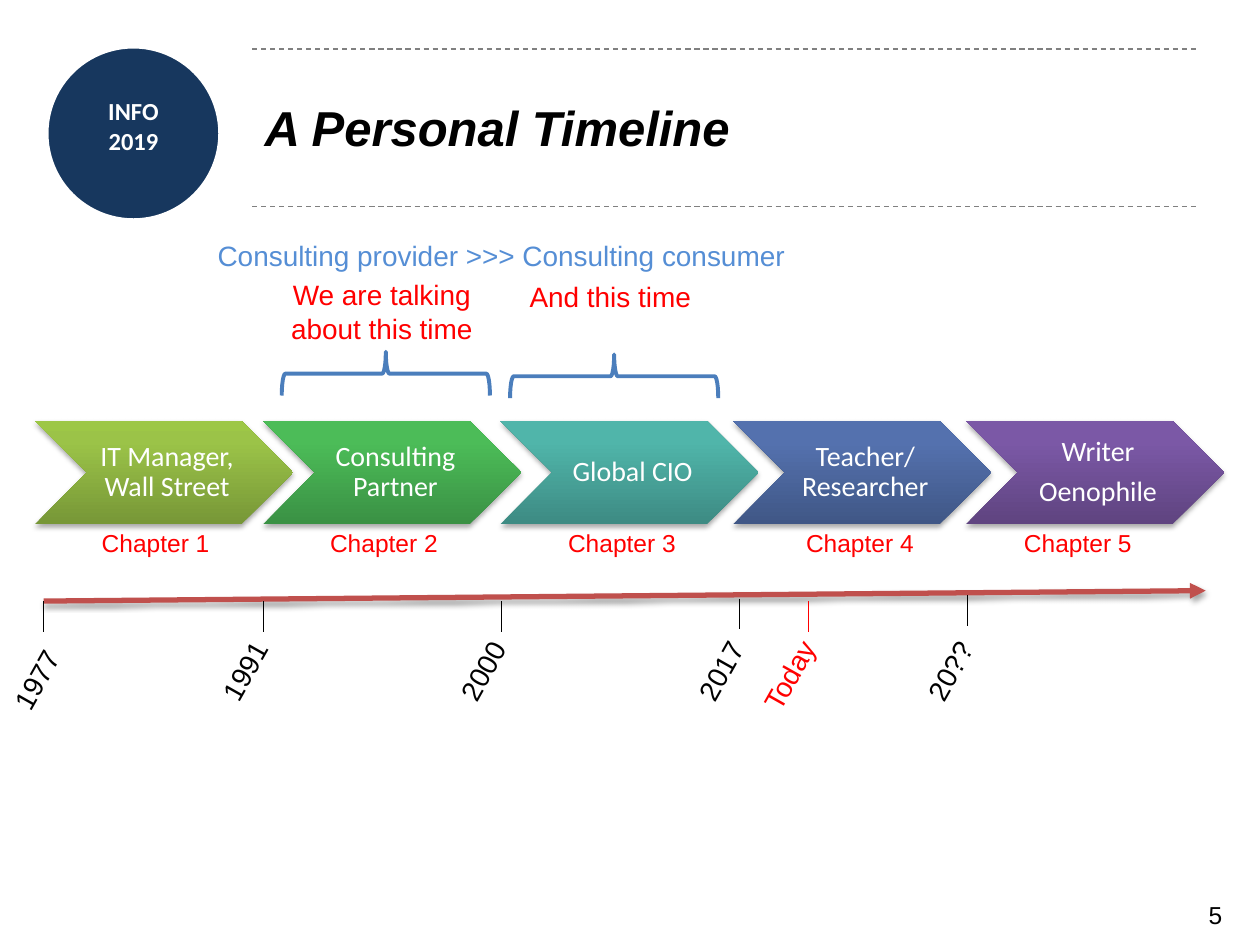
import copy
import pptx
import pptx.util
import pptx.dml.color
import pptx.enum.dml
import pptx.enum.shapes
import pptx.enum.text
import pptx.oxml
import pptx.oxml.ns

Pt = pptx.util.Pt
SHAPE = pptx.enum.shapes.MSO_SHAPE
ALIGN = pptx.enum.text.PP_ALIGN
MIDDLE = pptx.enum.text.MSO_ANCHOR.MIDDLE
RED, BLACK, WHITE = "FF0000", "000000", "FFFFFF"

# Content: text, chevron left, chapter left, gradient colours from the bottom up
CAREER = [
    (["IT Manager, Wall Street"], 20, 51, ("779737", "9BC348", "9DC746")),
    (["Consulting Partner"], 150.5, 181.5, ("3A9144", "4CBC58", "4ABF57")),
    (["Global CIO"], 286, 317.5, ("3D8B83", "50B5AA", "4EB8AC")),
    (["Teacher/ Researcher"], 419, 453.5, ("405786", "5471AE", "5271B0")),
    (["Writer", "Oenophile"], 552, 578, ("5F4480", "7B58A6", "7C57A8")),
]
# Label, tick x, tick top, label left, label top, label width, colour, tick weight
DATES = [
    ("1977", 25, 343.5, -6, 372, 57, BLACK, 0.75),
    ("1991", 150.5, 343.5, 113, 367, 57, BLACK, 0.75),
    ("2000", 286.5, 343.5, 249, 367, 57, BLACK, 0.75),
    ("2017", 422.5, 342, 385, 367, 57, BLACK, 0.75),
    ("20??", 553, 340, 516, 367, 57, BLACK, 0.75),
    ("Today", 462, 343.5, 421, 370, 62.5, RED, 1),
]
# Text, box, brace left, brace top
SPANS = [
    ("We are talking about this time", (156, 155, 124.5, 46), 208, 154),
    ("And this time", (286.5, 156, 124.5, 27), 338.5, 155.5),
]
TITLE = "A Personal Timeline"
BADGE = ["INFO", "2019"]
ROLES = "Consulting provider >>> Consulting consumer"
PAGE = "5"

SHADOW = ('<a:outerShdw %s blurRad="39370" dist="22860" dir="5400000" rotWithShape="0">'
          '<a:srgbClr val="000000"><a:alpha val="35000"/></a:srgbClr></a:outerShdw>'
          % pptx.oxml.ns.nsdecls("a"))


def color(text):
    return pptx.dml.color.RGBColor.from_string(text)


def apply(target, values):
    for name, value in values.items():
        setattr(target, name, value)


def write(shape, lines, size, hue, font="Arial", align=ALIGN.LEFT,
          inset=None, frame=None, para=None, style=None):
    box = shape.text_frame
    apply(box, {"word_wrap": True, **(frame or {})})
    if inset:
        sides = ("margin_left", "margin_top", "margin_right", "margin_bottom")
        apply(box, {side: Pt(gap) for side, gap in zip(sides, inset)})
    for i, line in enumerate(lines):
        p = box.add_paragraph() if i else box.paragraphs[0]
        apply(p, {"alignment": align, **(para or {})})
        run = p.add_run()
        run.text = line
        apply(run.font, {"name": font, "size": Pt(size), **(style or {})})
        run.font.color.rgb = color(hue)


def label(place, lines, size, hue, **more):
    box = slide.shapes.add_textbox(*map(Pt, place))
    write(box, lines, size, hue, **more)
    return box


def shape(kind, place):
    item = slide.shapes.add_shape(kind, *map(Pt, place))
    item.shadow.inherit = False
    return item


def line(x1, y1, x2, y2, hue, width, dash=None):
    item = slide.shapes.add_connector(
        pptx.enum.shapes.MSO_CONNECTOR.STRAIGHT, *map(Pt, (x1, y1, x2, y2)))
    apply(item.line, {"width": Pt(width), "dash_style": dash})
    item.line.color.rgb = color(hue)
    item._element.spPr.append(pptx.oxml.parse_xml(
        "<a:effectLst %s/>" % pptx.oxml.ns.nsdecls("a")))
    return item


def shade(item):
    effect = item._element.spPr.find(pptx.oxml.ns.qn("a:effectLst"))
    effect.append(pptx.oxml.parse_xml(SHADOW))


def blend(item, hues):
    item.fill.gradient()
    item.fill.gradient_angle = 90
    stops = item._element.spPr.find(".//" + pptx.oxml.ns.qn("a:gsLst"))
    stops.append(copy.deepcopy(stops[-1]))
    for stop, spot, hue in zip(item.fill.gradient_stops, (0, 0.8, 1), hues):
        stop.position = spot
        stop.color.rgb = color(hue)


deck = pptx.Presentation()
apply(deck, {"slide_width": Pt(720), "slide_height": Pt(540)})
slide = deck.slides.add_slide(deck.slide_layouts[5])

# Header: badge, rules, title and page number
disc = shape(SHAPE.OVAL, (26.5, 26.5, 99.5, 99.5))
disc.fill.solid()
disc.fill.fore_color.rgb = color("17375E")
disc.line.color.rgb = color(WHITE)
disc.line.width = Pt(2.5)
label((31, 55, 90.5, 34), BADGE, 14, WHITE, font="Calibri",
      align=ALIGN.CENTER, inset=(0, 0, 0, 0), style={"bold": True})
for y in (28, 118):
    line(144, y, 684, y, "808080", 0.75, pptx.enum.dml.MSO_LINE.DASH)
title = slide.shapes.title
apply(title, dict(zip(("left", "top", "width", "height"),
                      map(Pt, (144, 27.5, 540, 90)))))
write(title, [TITLE], 28, BLACK, frame={"vertical_anchor": MIDDLE},
      style={"bold": True, "italic": True})
label((610, 510.5, 95.5, 29.5), [PAGE], 14, BLACK, align=ALIGN.RIGHT)

# Career chevrons and chapters
for i, (lines, left, below, hues) in enumerate(CAREER, 1):
    step = shape(SHAPE.CHEVRON, (left, 240.5, 147.5, 59))
    blend(step, hues)
    step.line.fill.background()
    shade(step)
    write(step, lines, 16, WHITE, font="Calibri", align=ALIGN.CENTER,
          inset=(5, 1.5, 1.5, 1.5), frame={"vertical_anchor": MIDDLE},
          para={"line_spacing": 0.9, "space_after": Pt(5.6)})
    label((below, 298, 76.5, 24.5), [f"Chapter {i}"], 14, RED,
          frame={"word_wrap": False})

# Time axis with dates
axis = line(25, 343.5, 689, 337.5, "C0504D", 3)
axis.line._get_or_add_ln().append(pptx.oxml.parse_xml(
    '<a:tailEnd %s type="triangle"/>' % pptx.oxml.ns.nsdecls("a")))
shade(axis)
for text, x, y, left, top, width, hue, weight in DATES:
    line(x, y, x, y + 17.5, hue, weight)
    label((left, top, width, 26.5), [text], 16, hue).rotation = 299.4

# Braces and notes above the chevrons
for text, place, left, top in SPANS:
    brace = shape(SHAPE.RIGHT_BRACE, (left, top, 25, 119))
    brace.rotation = 270
    brace.fill.background()
    brace.line.color.rgb = color("4B7EBC")
    brace.line.width = Pt(2.25)
    label(place, [text], 16, RED, align=ALIGN.CENTER)
label((115, 132.5, 343, 26.5), [ROLES], 16, "558ED5", align=ALIGN.CENTER,
      frame={"word_wrap": False})

deck.save("out.pptx")
